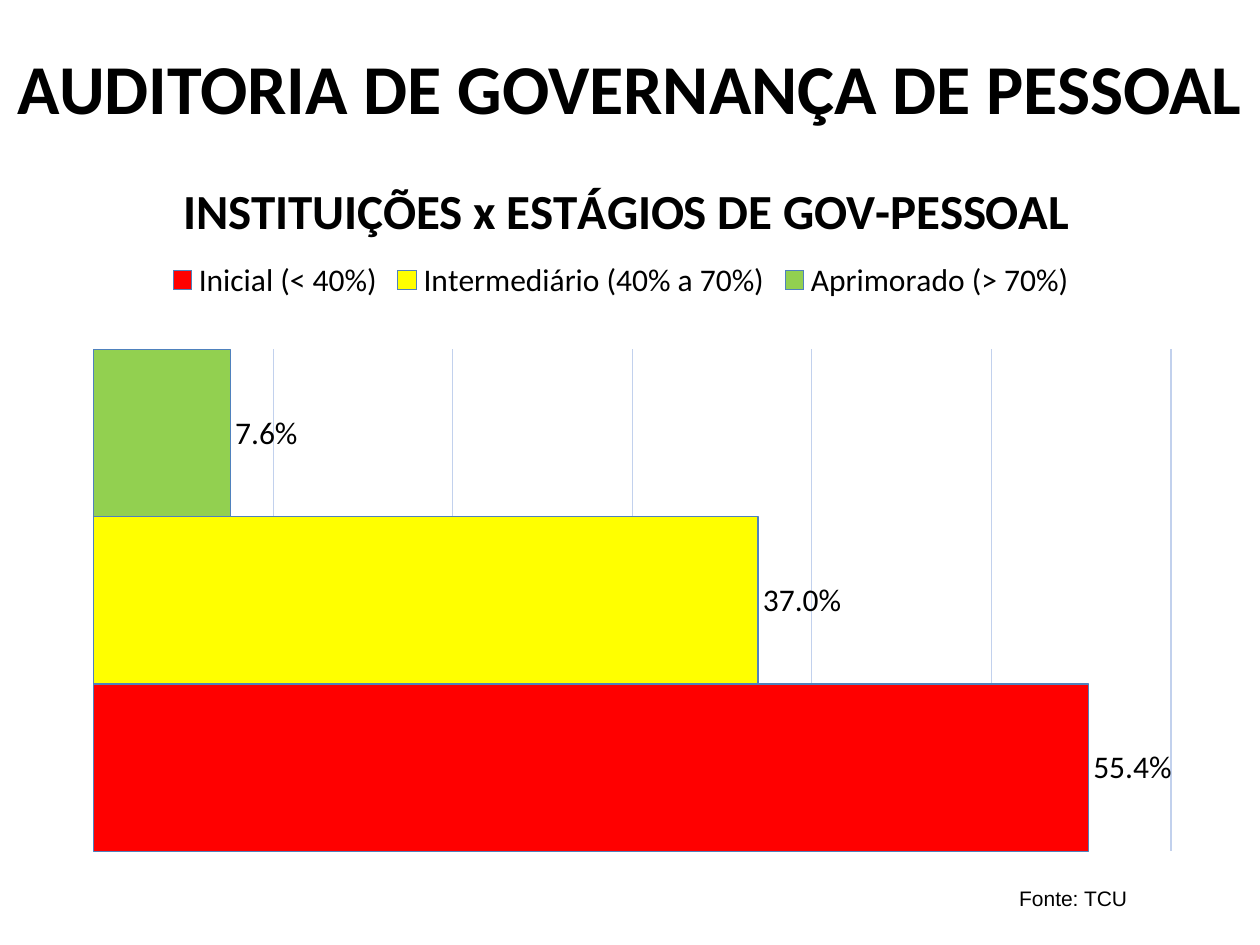
from lxml import etree
from pptx import Presentation
from pptx.chart.data import CategoryChartData
from pptx.dml.color import RGBColor
from pptx.enum.chart import XL_CHART_TYPE, XL_LABEL_POSITION, XL_LEGEND_POSITION
from pptx.enum.text import MSO_ANCHOR, PP_ALIGN
from pptx.oxml.ns import qn
from pptx.util import Inches, Pt

BAR_CLUSTERED = XL_CHART_TYPE.BAR_CLUSTERED
OUTSIDE_END = XL_LABEL_POSITION.OUTSIDE_END
LEGEND_TOP = XL_LEGEND_POSITION.TOP
TOP, BOTTOM = MSO_ANCHOR.TOP, MSO_ANCHOR.BOTTOM
LEFT, CENTER = PP_ALIGN.LEFT, PP_ALIGN.CENTER

BLACK = RGBColor(0x00, 0x00, 0x00)
RED = RGBColor(0xFF, 0x00, 0x00)
YELLOW = RGBColor(0xFF, 0xFF, 0x00)
GREEN = RGBColor(0x92, 0xD0, 0x50)
OUTLINE_BLUE = RGBColor(0x4F, 0x81, 0xBD)
GRID_BLUE = RGBColor(0xC2, 0xD1, 0xED)

STAGES = [
    ("Inicial (< 40%)", 0.554, RED),
    ("Intermediário (40% a 70%)", 0.37, YELLOW),
    ("Aprimorado (> 70%)", 0.076, GREEN),
]


def add_text(page, text, left, top, width, height, size, font,
             bold=False, align=LEFT, anchor=TOP):
    box = page.shapes.add_textbox(Inches(left), Inches(top), Inches(width), Inches(height))
    frame = box.text_frame
    frame.word_wrap = True
    frame.vertical_anchor = anchor
    para = frame.paragraphs[0]
    para.alignment = align
    span = para.add_run()
    span.text = text
    span.font.size = Pt(size)
    span.font.name = font
    span.font.bold = bold
    span.font.color.rgb = BLACK


def place(element, index, **settings):
    """Give a chart part a manual layout, as fractions of the chart."""
    layout = element.find(qn("c:layout"))
    if layout is None:
        layout = etree.Element(qn("c:layout"))
        element.insert(index, layout)
    for child in list(layout):
        layout.remove(child)
    manual = etree.SubElement(layout, qn("c:manualLayout"))
    for name, value in settings.items():
        etree.SubElement(manual, qn(f"c:{name}")).set("val", str(value))


deck = Presentation()
deck.slide_width = Inches(10)
deck.slide_height = Inches(7.5)
page = deck.slides.add_slide(deck.slide_layouts[6])

add_text(page, "AUDITORIA DE GOVERNANÇA DE PESSOAL", 0, 0.18, 10, 0.89, 40, "Calibri",
         bold=True, align=CENTER, anchor=BOTTOM)

data = CategoryChartData(number_format="0.0%")
data.categories = [name for name, share, color in STAGES]
data.add_series("Series 1", [share for name, share, color in STAGES])
chart = page.shapes.add_chart(BAR_CLUSTERED, Inches(0.12), Inches(1.28),
                              Inches(9.76), Inches(5.7), data).chart
chart.font.name = "Calibri"
chart.font.size = Pt(10)
chart.font.color.rgb = BLACK

chart.has_title = True
title_frame = chart.chart_title.text_frame
title_frame.text = "INSTITUIÇÕES x ESTÁGIOS DE GOV-PESSOAL"
title_font = title_frame.paragraphs[0].runs[0].font
title_font.name = "Calibri"
title_font.size = Pt(28)
title_font.bold = True
title_font.color.rgb = BLACK
place(chart.chart_title._element, 1, xMode="edge", yMode="edge", x=0.13, y=0.01)

chart.has_legend = True
legend = chart.legend
legend.position = LEGEND_TOP
legend.include_in_layout = False
legend.font.name = "Calibri"
legend.font.size = Pt(18)
legend.font.color.rgb = BLACK
place(legend._element, 1, xMode="edge", yMode="edge", x=0.12, y=0.13)

chart.category_axis.visible = False
value_axis = chart.value_axis
value_axis.visible = False
value_axis.minimum_scale = 0
value_axis.maximum_scale = 0.6
value_axis.major_unit = 0.1
value_axis.has_major_gridlines = True
value_axis.major_gridlines.format.line.color.rgb = GRID_BLUE
value_axis.major_gridlines.format.line.width = Pt(0.75)

plot = chart.plots[0]
plot.vary_by_categories = True
plot.gap_width = 0
plot.overlap = 17
plot.has_data_labels = True
labels = plot.data_labels
labels.show_value = True
labels.position = OUTSIDE_END
labels.number_format = "0.0%"
labels.number_format_is_linked = False
labels.font.name = "Calibri"
labels.font.size = Pt(18)
labels.font.color.rgb = BLACK
for index, (name, share, color) in enumerate(STAGES):
    bar = plot.series[0].points[index].format
    bar.fill.solid()
    bar.fill.fore_color.rgb = color
    bar.line.color.rgb = OUTLINE_BLUE
    bar.line.width = Pt(0.75)

plot_area = chart._chartSpace.find(".//" + qn("c:plotArea"))
place(plot_area, 0, layoutTarget="inner", xMode="edge", yMode="edge",
      x=0.064, y=0.262, w=0.876, h=0.699)

add_text(page, "Fonte: TCU", 7.99, 6.98, 2.01, 0.3, 12, "Arial")

deck.save("out.pptx")
